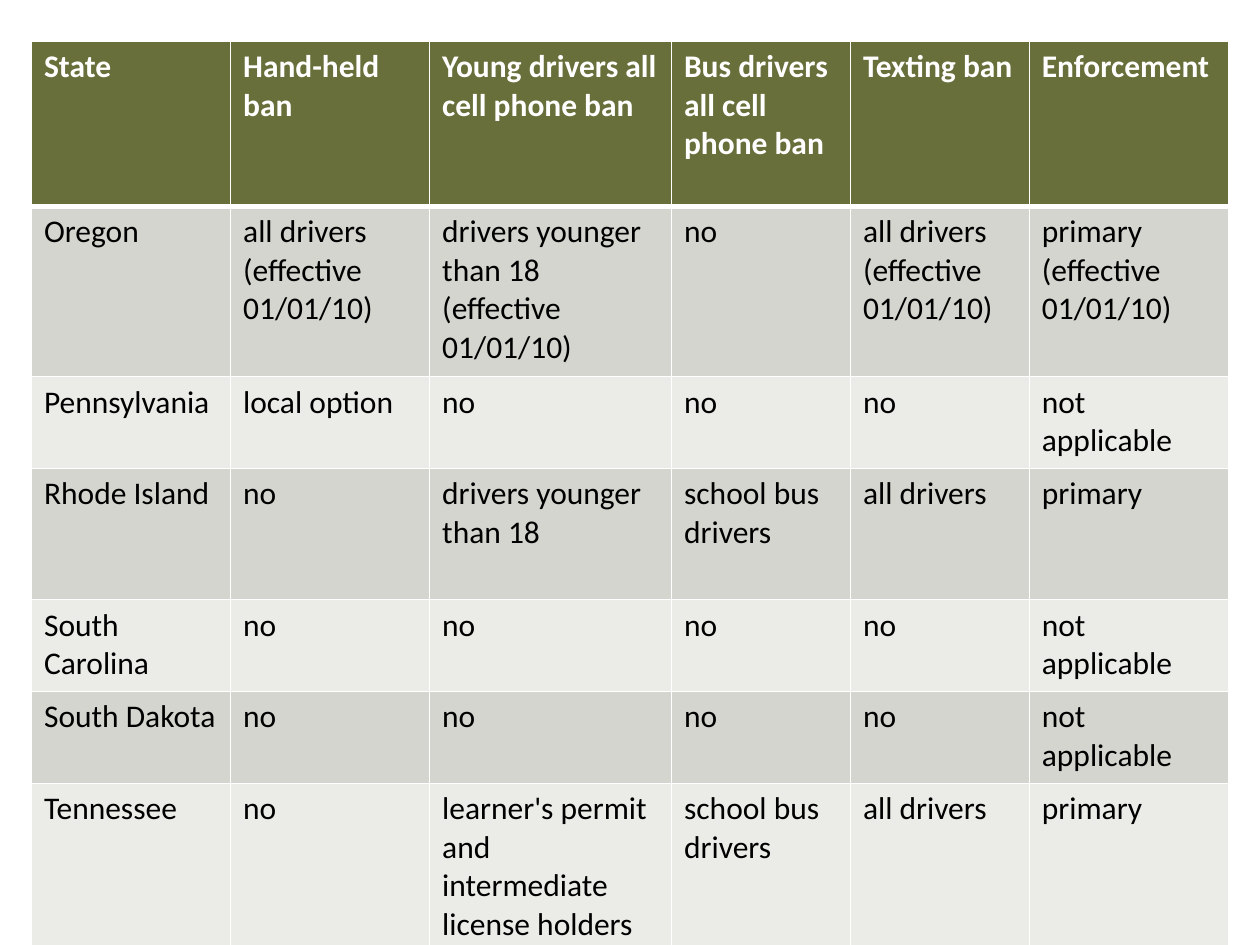
from lxml import etree
from pptx import Presentation
from pptx.dml.color import RGBColor
from pptx.oxml.ns import qn
from pptx.util import Inches, Pt

COLORS = {
    "header": "686F3A",
    "odd": "D4D5CE",
    "even": "EBEBE8",
    "white": "FFFFFF",
    "black": "000000",
}
FONT = "Calibri"
BLANK_LAYOUT = 6
LEFT, TOP = 0.25, 0.33
COLUMN_WIDTHS = [1.58, 1.58, 1.92, 1.42, 1.42, 1.58]
ROW_HEIGHTS = [1.31, 1.35, 0.73, 1.04, 0.73, 0.73, 1.28]
ROWS = [
    ["State", "Hand-held ban", "Young drivers all cell phone ban",
     "Bus drivers all cell phone ban", "Texting ban", "Enforcement"],
    ["Oregon", "all drivers (effective 01/01/10)",
     "drivers younger than 18 (effective 01/01/10)", "no",
     "all drivers (effective 01/01/10)", "primary (effective 01/01/10)"],
    ["Pennsylvania", "local option", "no", "no", "no", "not applicable"],
    ["Rhode Island", "no", "drivers younger than 18",
     "school bus drivers", "all drivers", "primary"],
    ["South Carolina", "no", "no", "no", "no", "not applicable"],
    ["South Dakota", "no", "no", "no", "no", "not applicable"],
    ["Tennessee", "no", "learner's permit and intermediate license holders",
     "school bus drivers", "all drivers", "primary"],
]


def set_borders(cell, widths, color):
    properties = cell._tc.get_or_add_tcPr()
    for position, (side, width) in enumerate(widths.items()):
        line = etree.Element(qn(f"a:ln{side}"), w=str(Pt(width)))
        fill = etree.SubElement(line, qn("a:solidFill"))
        etree.SubElement(fill, qn("a:srgbClr"), val=color)
        properties.insert(position, line)


def write_cell(cell, text, fill, color, bold=False, top=1, bottom=1):
    cell.fill.solid()
    cell.fill.fore_color.rgb = RGBColor.from_string(fill)
    span = cell.text_frame.paragraphs[0].add_run()
    span.text = text
    span.font.name = FONT
    span.font.size = Pt(18)
    span.font.bold = bold
    span.font.color.rgb = RGBColor.from_string(color)
    set_borders(cell, {"L": 1, "R": 1, "T": top, "B": bottom}, COLORS["white"])


def main():
    deck = Presentation()
    deck.slide_width, deck.slide_height = Inches(10), Inches(7.5)
    page = deck.slides.add_slide(deck.slide_layouts[BLANK_LAYOUT])
    table = page.shapes.add_table(
        len(ROWS), len(COLUMN_WIDTHS), Inches(LEFT), Inches(TOP),
        Inches(sum(COLUMN_WIDTHS)), Inches(sum(ROW_HEIGHTS))).table
    for column, width in zip(table.columns, COLUMN_WIDTHS):
        column.width = Inches(width)
    for index, (row, height, texts) in enumerate(zip(table.rows, ROW_HEIGHTS, ROWS)):
        row.height = Inches(height)
        if index == 0:
            style = dict(fill=COLORS["header"], color=COLORS["white"], bold=True, bottom=3)
        else:
            band = COLORS["odd" if index % 2 else "even"]
            style = dict(fill=band, color=COLORS["black"], top=3 if index == 1 else 1)
        for cell, text in zip(row.cells, texts):
            write_cell(cell, text, **style)
    deck.save("out.pptx")


if __name__ == "__main__":
    main()
